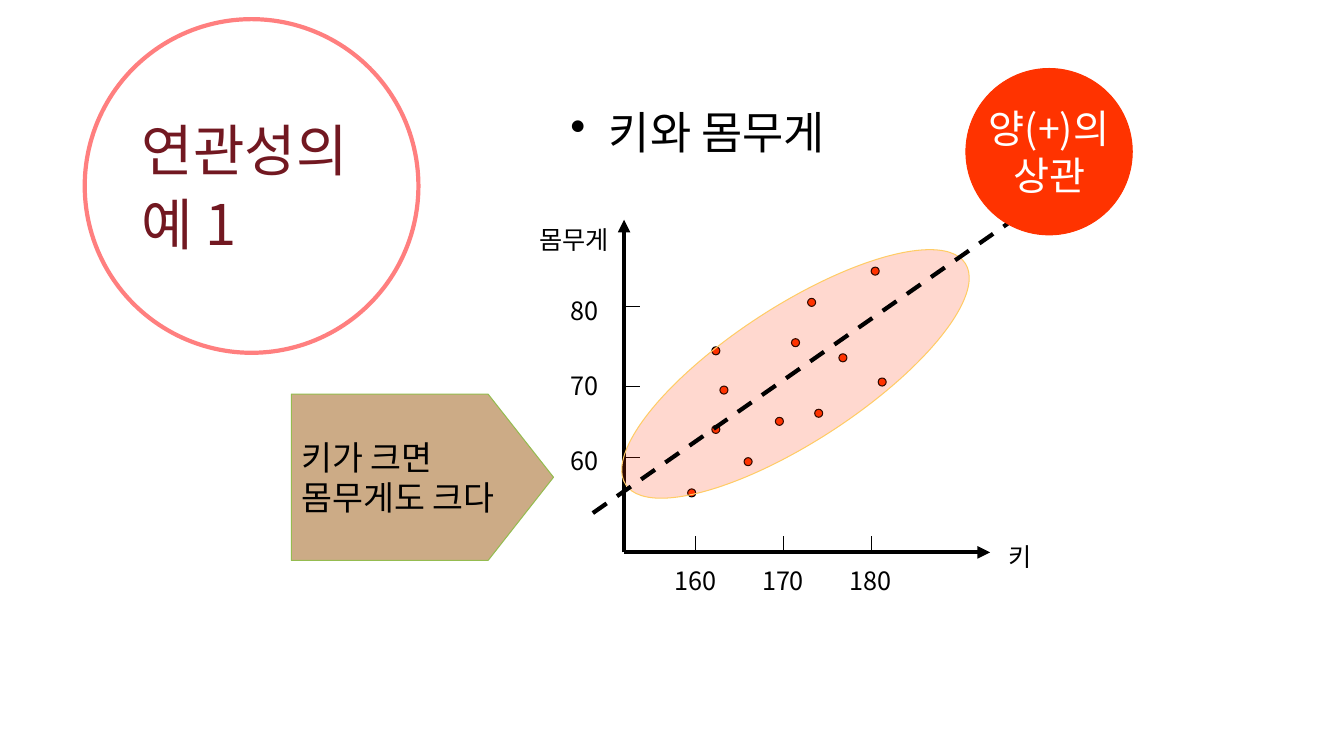
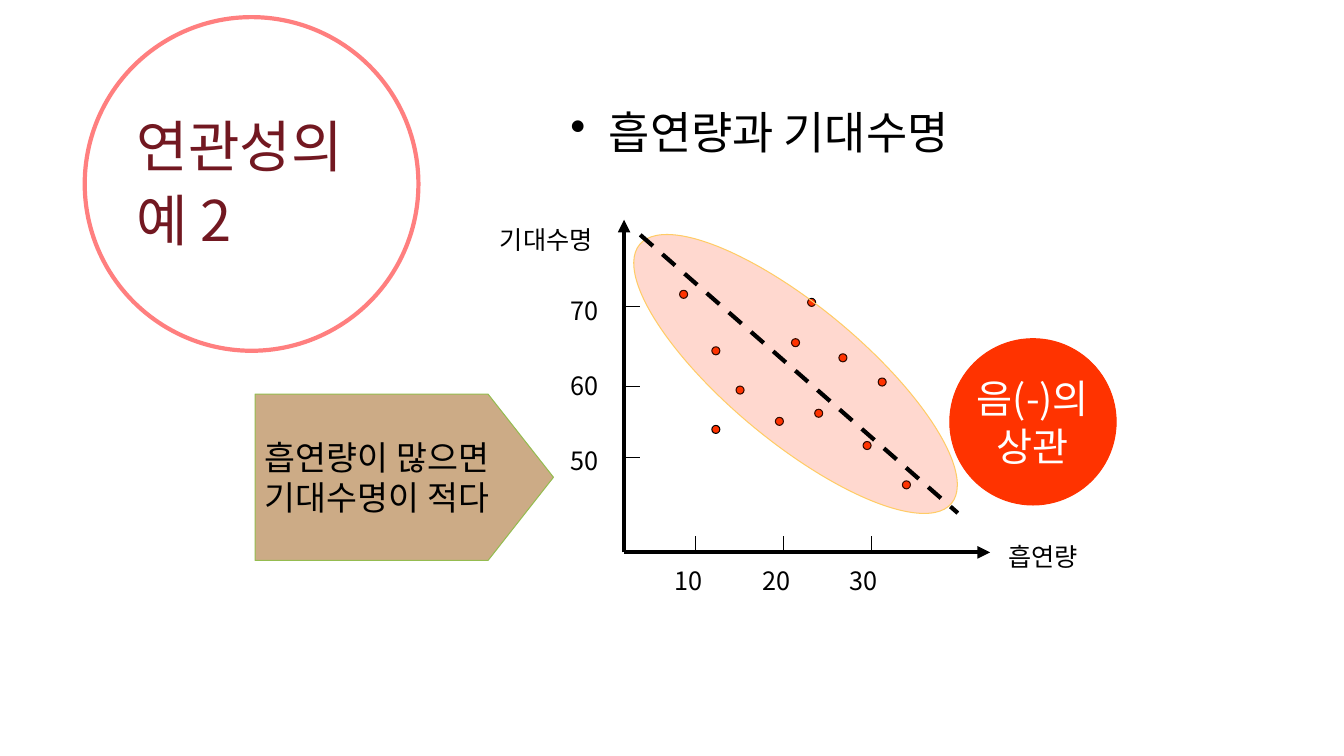
from pptx import Presentation
from pptx.dml.color import RGBColor
from pptx.enum.dml import MSO_LINE
from pptx.enum.shapes import MSO_CONNECTOR, MSO_SHAPE
from pptx.enum.text import MSO_ANCHOR, PP_ALIGN
from pptx.oxml.ns import qn
from pptx.util import Inches, Pt
from lxml.etree import SubElement

# Shared look
FONT = "Noto Sans CJK KR"
BLACK = RGBColor(0x00, 0x00, 0x00)
WHITE = RGBColor(0xFF, 0xFF, 0xFF)
MAROON = RGBColor(0x72, 0x18, 0x21)
RED = RGBColor(0xFF, 0x00, 0x00)
ORANGE = RGBColor(0xFF, 0x33, 0x00)
GOLD = RGBColor(0xFF, 0xCC, 0x66)
TAN = RGBColor(0xCC, 0xAB, 0x86)
GREEN = RGBColor(0x95, 0xBC, 0x50)
THIN, THICK = 0.75, 3

# Shared plot geometry, in inches
ORIGIN_X, ORIGIN_Y = 6.19, 5.48
AXIS_TOP, AXIS_RIGHT = 2.18, 9.82
TICK = 0.16
X_TICKS = [6.9 + 0.87 * i for i in range(3)]
Y_TICKS = [4.54, 3.83, 3.04]
LABEL_HEIGHT = 0.4
DOT = 0.08
CLOUD = (5.88, 3.04, 4.02, 1.34)
ARROW_TIP, ARROW_TOP, ARROW_HEIGHT = 5.49, 3.91, 1.65
BADGE = 1.65
RING = 3.31
COMMON_DOTS = [(7.69, 4.14), (7.85, 3.36), (8.32, 3.51), (8.08, 4.06),
               (7.06, 4.22), (8.01, 2.96), (8.71, 3.75), (7.06, 3.44)]

# Content
SLIDES = [
    {
        "title": "연관성의 \v예 1", "title_at": (1.31, 0.68), "ring_top": 0.19,
        "topic": "키와 몸무게",
        "x_name": "키", "y_name": "몸무게", "y_name_left": 5.25,
        "x_values": ["160", "170", "180"], "y_values": ["60", "70", "80"],
        "dots": [(8.64, 2.65), (6.82, 4.85), (7.14, 3.83), (7.38, 4.54)],
        "tilt": 326.9, "trend": (5.88, 5.09, 10.05, 2.18),
        "finding": ["키가 크면", "몸무게도 크다"], "arrow_left": 2.89,
        "badge": ["양(+)의", "상관"], "badge_at": (9.58, 0.68),
    },
    {
        "title": "연관성의 \v예 2", "title_at": (1.26, 0.64), "ring_top": 0.17,
        "topic": "흡연량과 기대수명",
        "x_name": "흡연량", "y_name": "기대수명", "y_name_left": 4.86,
        "x_values": ["10", "20", "30"], "y_values": ["50", "60", "70"],
        "dots": [(8.56, 4.38), (6.74, 2.88), (7.3, 3.83), (8.95, 4.77)],
        "tilt": 39.7, "trend": (6.35, 2.33, 9.5, 5.09),
        "finding": ["흡연량이 많으면", "기대수명이 적다"], "arrow_left": 2.53,
        "badge": ["음(-)의", "상관"], "badge_at": (9.42, 3.36),
    },
]


def write(shape, lines, size, color, align=PP_ALIGN.LEFT, wrap=False, anchor=MSO_ANCHOR.TOP):
    frame = shape.text_frame
    frame.word_wrap = wrap
    frame.vertical_anchor = anchor
    frame.text = "\n".join(lines)
    for para in frame.paragraphs:
        para.alignment = align
        para.font.size = Pt(size)
        para.font.name = FONT
        para.font.color.rgb = color
        SubElement(para.font._element, qn("a:ea"), typeface=FONT)
    return frame.paragraphs[0]


def add_text(page, at, lines, size, color, **style):
    box = page.shapes.add_textbox(*map(Inches, at))
    return write(box, lines, size, color, **style)


def set_alpha(fill, percent):
    color = fill._xPr.find(qn("a:solidFill"))[0]
    SubElement(color, qn("a:alpha"), val=str(percent * 1000))


def add_shape(page, kind, at, fill, line, width=THIN):
    shape = page.shapes.add_shape(kind, *map(Inches, at))
    shape.shadow.inherit = False
    if fill is None:
        shape.fill.background()
    else:
        shape.fill.solid()
        shape.fill.fore_color.rgb = fill
    shape.line.color.rgb = line
    shape.line.width = Pt(width)
    return shape


def add_line(page, ends, width, dashed=False, arrow=False):
    line = page.shapes.add_connector(MSO_CONNECTOR.STRAIGHT, *map(Inches, ends))
    line.line.color.rgb = BLACK
    line.line.width = Pt(width)
    if dashed:
        line.line.dash_style = MSO_LINE.DASH
    if arrow:
        SubElement(line.line._get_or_add_ln(), qn("a:tailEnd"), type="triangle")
    SubElement(line._element.spPr, qn("a:effectLst"))


def add_heading(page, content):
    add_text(page, (*content["title_at"], 2.53, 2.27), [content["title"]], 40, MAROON,
             wrap=True, anchor=MSO_ANCHOR.MIDDLE).line_spacing = 1.1
    topic = add_text(page, (5.56, 0.99, 5.52, 0.95), [content["topic"]], 32, BLACK, wrap=True)
    topic.space_before = Pt(6.4)
    props = topic._p.get_or_add_pPr()
    props.set("marL", str(Inches(0.38)))
    props.set("indent", str(-Inches(0.38)))
    bullet = props.makeelement(qn("a:buChar"), {"char": "•"})
    props.insert(props.index(props.find(qn("a:defRPr"))), bullet)
    ring = add_shape(page, MSO_SHAPE.OVAL, (0.84, content["ring_top"], RING, RING),
                     None, RED, THICK)
    set_alpha(ring.line.fill, 50)


def add_axes(page, content):
    add_line(page, (ORIGIN_X, ORIGIN_Y, ORIGIN_X, AXIS_TOP), THICK, arrow=True)
    add_line(page, (ORIGIN_X, ORIGIN_Y, AXIS_RIGHT, ORIGIN_Y), THICK, arrow=True)
    labels = [(content["x_name"], 9.9, 5.32, 1.2),
              (content["y_name"], content["y_name_left"], AXIS_TOP, 1.3)]
    for x, value in zip(X_TICKS, content["x_values"]):
        add_line(page, (x, ORIGIN_Y, x, ORIGIN_Y - TICK), THIN)
        labels.append((value, x - 0.31, 5.56, 0.85))
    for row, (y, value) in enumerate(zip(Y_TICKS, content["y_values"])):
        add_line(page, (ORIGIN_X, y, ORIGIN_X + TICK, y), THIN)
        labels.append((value, 5.56, 4.37 - 0.745 * row, 0.6))
    for text, left, top, width in labels:
        add_text(page, (left, top, width, LABEL_HEIGHT), [text], 18, BLACK, wrap=True)


def add_scatter(page, content):
    for left, top in COMMON_DOTS + content["dots"]:
        add_shape(page, MSO_SHAPE.OVAL, (left, top, DOT, DOT), ORANGE, BLACK)
    cloud = add_shape(page, MSO_SHAPE.OVAL, CLOUD, ORANGE, GOLD)
    cloud.rotation = content["tilt"]
    set_alpha(cloud.fill, 19)


def add_conclusion(page, content):
    left = content["arrow_left"]
    arrow = add_shape(page, MSO_SHAPE.PENTAGON,
                      (left, ARROW_TOP, ARROW_TIP - left, ARROW_HEIGHT), TAN, GREEN)
    arrow.adjustments[0] = 0.393
    write(arrow, content["finding"], 24, BLACK, anchor=MSO_ANCHOR.MIDDLE)
    add_line(page, content["trend"], THICK, dashed=True)
    badge = add_shape(page, MSO_SHAPE.OVAL, (*content["badge_at"], BADGE, BADGE), ORANGE, ORANGE)
    write(badge, content["badge"], 28, WHITE, align=PP_ALIGN.CENTER, anchor=MSO_ANCHOR.MIDDLE)


def main():
    deck = Presentation()
    deck.slide_width, deck.slide_height = Inches(13.33), Inches(7.5)
    for content in SLIDES:
        page = deck.slides.add_slide(deck.slide_layouts[6])
        for add_part in (add_heading, add_axes, add_scatter, add_conclusion):
            add_part(page, content)
    deck.save("out.pptx")


if __name__ == "__main__":
    main()
